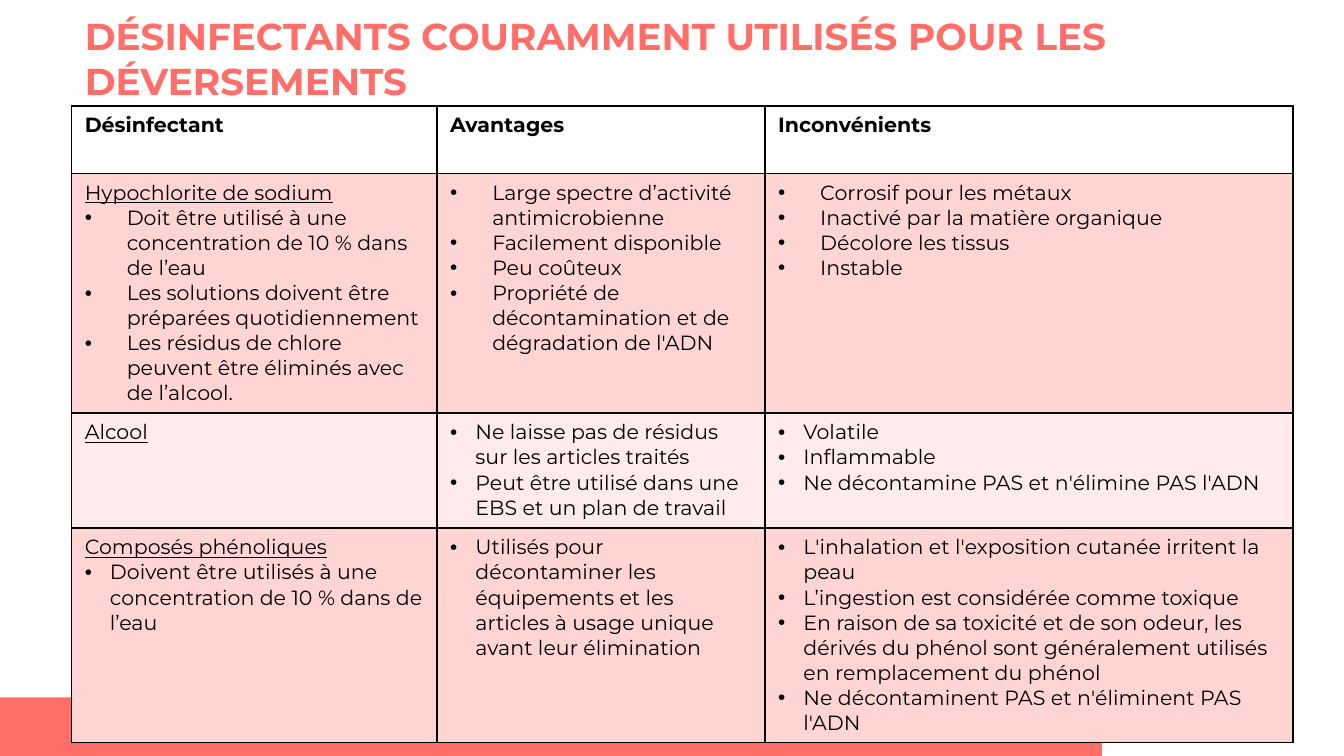
from dataclasses import dataclass

from lxml import etree
from pptx import Presentation
from pptx.dml.color import RGBColor
from pptx.enum.shapes import MSO_SHAPE
from pptx.enum.text import MSO_ANCHOR, PP_ALIGN
from pptx.oxml.ns import qn
from pptx.util import Pt

RECT = MSO_SHAPE.RECTANGLE
TOP = MSO_ANCHOR.TOP
LEFT = PP_ALIGN.LEFT

FONT = "Montserrat"
COLORS = {
    "coral": "FF6E68",
    "rose": "FFD5D4",
    "blush": "FFEBEB",
    "white": "FFFFFF",
    "black": "000000",
}
COLS = (195.8, 175.7, 283)
WIDE, TIGHT = 22.5, 13.5  # bullet indents


@dataclass
class Cell:
    head: str = ""
    items: tuple[str, ...] = ()
    dent: float = TIGHT


@dataclass
class Row:
    height: float
    fill: str
    cells: tuple[Cell, ...]
    title: bool = False


ROWS = (
    Row(36, "white", (Cell("Désinfectant"), Cell("Avantages"), Cell("Inconvénients")), title=True),
    Row(128.5, "rose", (
        Cell("Hypochlorite de sodium", (
            "Doit être utilisé à une concentration de 10 % dans de l’eau",
            "Les solutions doivent être préparées quotidiennement",
            "Les résidus de chlore peuvent être éliminés avec de l’alcool.",
        ), WIDE),
        Cell(items=(
            "Large spectre d’activité antimicrobienne",
            "Facilement disponible",
            "Peu coûteux",
            "Propriété de décontamination et de dégradation de l'ADN",
        ), dent=WIDE),
        Cell(items=(
            "Corrosif pour les métaux",
            "Inactivé par la matière organique",
            "Décolore les tissus",
            "Instable",
        ), dent=WIDE),
    )),
    Row(61.6, "blush", (
        Cell("Alcool"),
        Cell(items=(
            "Ne laisse pas de résidus sur les articles traités",
            "Peut être utilisé dans une EBS et un plan de travail",
        )),
        Cell(items=(
            "Volatile",
            "Inflammable",
            "Ne décontamine PAS et n'élimine PAS l'ADN",
        )),
    )),
    Row(114.6, "rose", (
        Cell("Composés phénoliques", (
            "Doivent être utilisés à une concentration de 10 % dans de l’eau",
        )),
        Cell(items=(
            "Utilisés pour décontaminer les équipements et les articles à usage unique "
            "avant leur élimination",
        )),
        Cell(items=(
            "L'inhalation et l'exposition cutanée irritent la peau",
            "L’ingestion est considérée comme toxique",
            "En raison de sa toxicité et de son odeur, les dérivés du phénol sont "
            "généralement utilisés en remplacement du phénol",
            "Ne décontaminent PAS et n'éliminent PAS l'ADN",
        )),
    )),
)


def rgb(name: str) -> RGBColor:
    return RGBColor.from_string(COLORS[name])


def style(para, size: float, color: str, bold: bool = False, under: bool = False) -> None:
    para.alignment = LEFT
    para.line_spacing = 1.0
    for run in para.runs:
        font = run.font
        font.name, font.size = FONT, Pt(size)
        font.bold, font.underline = bold, under
        font.color.rgb = rgb(color)


def add_bullet(para, dent: float) -> None:
    props = para._p.get_or_add_pPr()
    props.set("marL", str(Pt(dent)))
    props.set("indent", str(-Pt(dent)))
    etree.SubElement(props, qn("a:buFont")).set("typeface", "Arial")
    etree.SubElement(props, qn("a:buChar")).set("char", "•")


def add_border(box) -> None:
    """Rule all four sides of a table cell; call before its fill is set."""
    props = box._tc.get_or_add_tcPr()
    for side in ("a:lnL", "a:lnR", "a:lnT", "a:lnB"):
        line = etree.SubElement(props, qn(side), w=str(Pt(1)))
        fill = etree.SubElement(line, qn("a:solidFill"))
        etree.SubElement(fill, qn("a:srgbClr"), val=COLORS["black"])


def fill_cell(box, cell: Cell, row: Row) -> None:
    add_border(box)
    box.fill.solid()
    box.fill.fore_color.rgb = rgb(row.fill)
    box.vertical_anchor = TOP
    frame = box.text_frame
    lines = ([cell.head] if cell.head else []) + list(cell.items)
    frame.text = "\n".join(lines)
    for i, para in enumerate(frame.paragraphs):
        head = bool(cell.head) and i == 0
        style(para, 11, "black", bold=row.title, under=head and not row.title)
        if not head:
            add_bullet(para, cell.dent)


def add_band(slide) -> None:
    band = slide.shapes.add_shape(RECT, Pt(0), Pt(373.7), Pt(590.4), Pt(31.3))
    band.shadow.inherit = False
    band.fill.solid()
    band.fill.fore_color.rgb = rgb("coral")
    band.line.fill.background()


def set_title(slide, text: str) -> None:
    title = slide.shapes.title
    title.left, title.top = Pt(38.2), Pt(0)
    title.width, title.height = Pt(638.6), Pt(45.4)
    frame = title.text_frame
    frame.text = text
    frame.word_wrap = True
    frame.vertical_anchor = TOP
    frame.margin_left = frame.margin_right = Pt(7.2)
    frame.margin_top = frame.margin_bottom = Pt(7.2)
    style(frame.paragraphs[0], 20, "coral", bold=True)


def add_grid(slide) -> None:
    high = sum(row.height for row in ROWS)
    grid = slide.shapes.add_table(
        len(ROWS), len(COLS), Pt(38.2), Pt(56.9), Pt(sum(COLS)), Pt(high)
    ).table
    grid.first_row = grid.horz_banding = False
    for col, width in zip(grid.columns, COLS):
        col.width = Pt(width)
    for r, row in enumerate(ROWS):
        grid.rows[r].height = Pt(row.height)
        for c, cell in enumerate(row.cells):
            fill_cell(grid.cell(r, c), cell, row)


def main() -> None:
    deck = Presentation()
    deck.slide_width, deck.slide_height = Pt(720), Pt(405)
    slide = deck.slides.add_slide(deck.slide_layouts[5])
    add_band(slide)
    set_title(slide, "DÉSINFECTANTS COURAMMENT UTILISÉS POUR LES DÉVERSEMENTS")
    add_grid(slide)
    deck.save("out.pptx")


if __name__ == "__main__":
    main()
